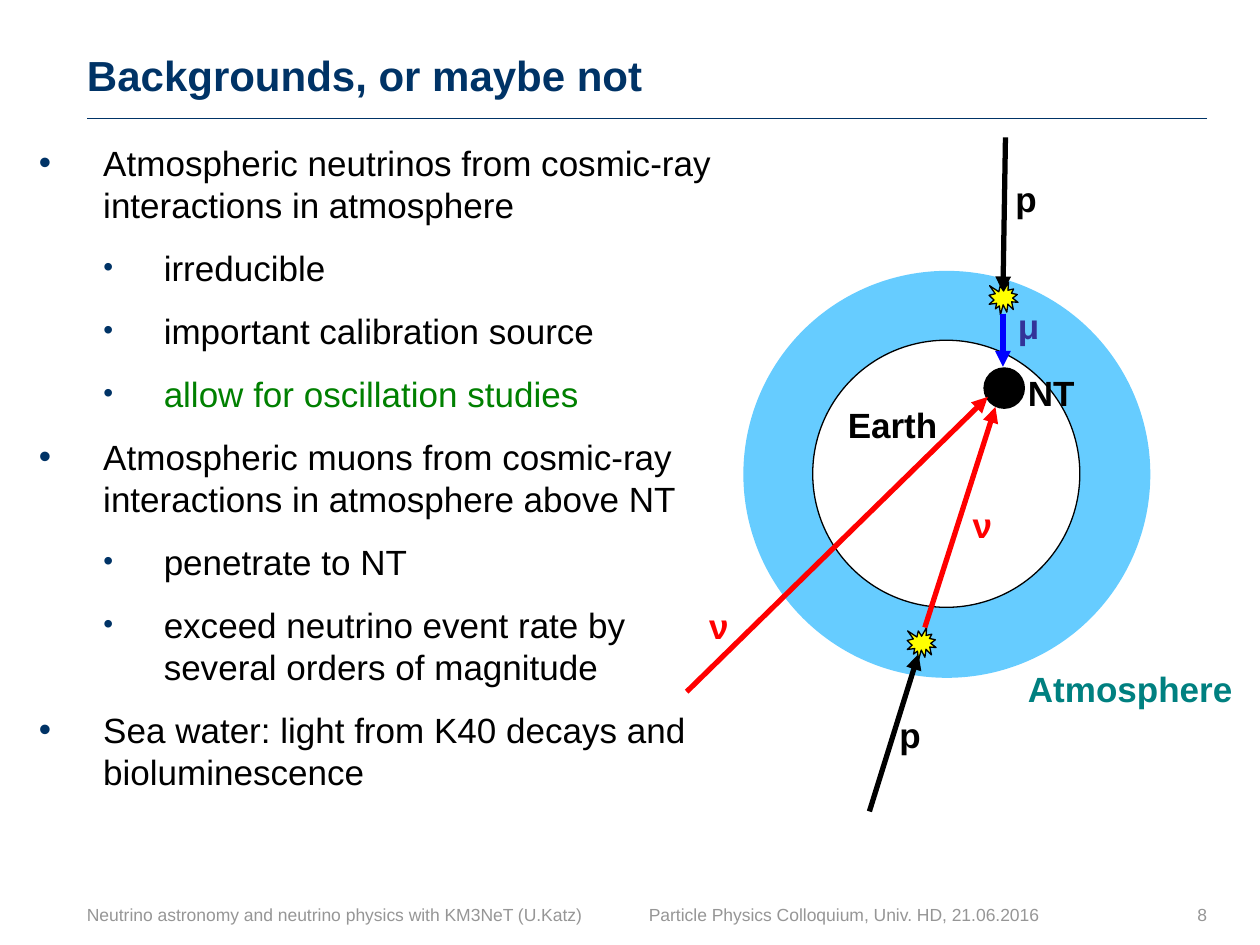
from lxml import etree
from pptx import Presentation
from pptx import util as u
from pptx.dml.color import RGBColor
from pptx.enum import shapes, text
from pptx.oxml.ns import qn

COLORS = {
    "navy": "003366", "grey": "969696", "white": "FFFFFF", "black": "000000",
    "green": "008000", "sky": "66CCFF", "yellow": "FFFF00", "red": "FF0000",
    "blue": "0000FF", "teal": "008080", "indigo": "333399",
}
SHAPE = shapes.MSO_SHAPE
ANCHOR = text.MSO_ANCHOR
INDENTS = [(0.51, 0.51), (0.99, 0.48)]  # left margin and hanging indent per level

BULLETS = [
    (0, "Atmospheric neutrinos from cosmic-ray interactions in atmosphere", "black"),
    (1, "irreducible", "black"),
    (1, "important calibration source", "black"),
    (1, "allow for oscillation studies", "green"),
    (0, "Atmospheric muons from cosmic-ray interactions in atmosphere above NT", "black"),
    (1, "penetrate to NT", "black"),
    (1, "exceed neutrino event rate by\nseveral orders of magnitude", "black"),
    (0, "Sea water: light from K40 decays and bioluminescence", "black"),
]
LABELS = [
    ("p", 7.04, 5.61, 0.37, "black"),
    ("Atmosphere", 8.06, 5.25, 1.84, "teal"),
    ("Earth", 6.63, 3.15, 0.92, "black"),
    ("μ", 7.98, 2.37, 0.36, "indigo"),
    ("ν", 5.53, 4.75, 0.35, "red"),
    ("p", 7.96, 1.36, 0.37, "black"),
    ("ν", 7.62, 3.95, 0.35, "red"),
    ("NT", 8.06, 2.9, 0.58, "black"),
]


def rgb(name):
    return RGBColor.from_string(COLORS[name])


def write(p, words, size=20, color="black", bold=False, align=None, spacing=None):
    """Fill a paragraph; a newline in the words becomes a line break."""
    for i, line in enumerate(words.split("\n")):
        if i:
            p.add_line_break()
        r = p.add_run()
        r.text = line
        r.font.name = "Arial"
        r.font.size = u.Pt(size)
        r.font.bold = bold
        r.font.color.rgb = rgb(color)
    if align is not None:
        p.alignment = align
    if spacing is not None:
        p.line_spacing = spacing


class Deck:
    def __init__(self):
        self.prs = Presentation()
        self.prs.slide_width = u.Inches(10)
        self.prs.slide_height = u.Inches(7.5)
        self.s = self.prs.slides.add_slide(self.prs.slide_layouts[6])

    def box(self, words, x, y, w, h, anchor=ANCHOR.MIDDLE, **fmt):
        """Add a wrapped text box without insets."""
        tf = self.s.shapes.add_textbox(*map(u.Inches, (x, y, w, h))).text_frame
        tf.word_wrap = True
        tf.vertical_anchor = anchor
        tf.margin_left = tf.margin_right = tf.margin_top = tf.margin_bottom = 0
        write(tf.paragraphs[0], words, **fmt)

    def label(self, words, x, y, w, color):
        sp = self.s.shapes.add_textbox(*map(u.Inches, (x, y, w, 0.44)))
        tf = sp.text_frame
        tf.word_wrap = False
        tf.auto_size = text.MSO_AUTO_SIZE.SHAPE_TO_FIT_TEXT
        write(tf.paragraphs[0], words, color=color, bold=True)

    def shape(self, kind, x, y, w, h, fill, line=None):
        sp = self.s.shapes.add_shape(kind, *map(u.Inches, (x, y, w, h)))
        sp.shadow.inherit = False
        sp.fill.solid()
        sp.fill.fore_color.rgb = rgb(fill)
        if line:
            sp.line.color.rgb = rgb(line)
            sp.line.width = u.Pt(0.75)
        else:
            sp.line.fill.background()
        return sp

    def circle(self, x, y, d, fill, line=None):
        self.shape(SHAPE.OVAL, x, y, d, d, fill, line)

    def burst(self, x, y):
        self.shape(SHAPE.EXPLOSION1, x, y, 0.23, 0.26, "yellow", "black")

    def line(self, x1, y1, x2, y2, color, width=3, arrow=True):
        c = self.s.shapes.add_connector(
            shapes.MSO_CONNECTOR.STRAIGHT, *map(u.Inches, (x1, y1, x2, y2)))
        c.line.color.rgb = rgb(color)
        c.line.width = u.Pt(width)
        if arrow:
            etree.SubElement(c.line._get_or_add_ln(), qn("a:tailEnd"), type="triangle")
        etree.SubElement(c._element.spPr, qn("a:effectLst"))

    def bullets(self, items, x, y, w, h):
        tf = self.shape(SHAPE.RECTANGLE, x, y, w, h, "white", "white").text_frame
        tf.word_wrap = True
        tf.vertical_anchor = ANCHOR.TOP
        tf.margin_left = tf.margin_right = tf.margin_top = tf.margin_bottom = 0
        for i, (level, words, color) in enumerate(items):
            p = tf.add_paragraph() if i else tf.paragraphs[0]
            p.level = level
            pPr = p._p.get_or_add_pPr()
            left, hang = INDENTS[level]
            pPr.set("marL", str(u.Inches(left)))
            pPr.set("indent", str(-u.Inches(hang)))
            clr = etree.SubElement(pPr, qn("a:buClr"))
            etree.SubElement(clr, qn("a:srgbClr"), val=COLORS["navy"])
            if level:
                etree.SubElement(pPr, qn("a:buSzPct"), val="80000")
            etree.SubElement(pPr, qn("a:buFont"), typeface="Arial")
            etree.SubElement(pPr, qn("a:buChar"), char="•")
            p.space_before = u.Pt(6 if i else 0)
            p.space_after = u.Pt(6)
            write(p, words, color=color, align=text.PP_ALIGN.LEFT, spacing=1.0)


def main():
    d = Deck()
    d.line(9.58, 0.94, 0.69, 0.94, "navy", width=0.75, arrow=False)
    footer = dict(size=10, color="grey")
    d.box("Neutrino astronomy and neutrino physics with KM3NeT (U.Katz)",
          0.69, 7.01, 4.3, 0.49, **footer)
    d.box("Particle Physics Colloquium, Univ. HD, 21.06.2016",
          5.15, 7.01, 3.36, 0.49, **footer)
    d.box("8", 9.09, 7.01, 0.49, 0.49, align=text.PP_ALIGN.RIGHT, **footer)
    d.box("Backgrounds, or maybe not", 0.69, 0.25, 8.75, 0.54, anchor=ANCHOR.BOTTOM,
          size=24, color="navy", bold=True, spacing=u.Pt(28))
    d.bullets(BULLETS, 0.31, 1.12, 5.64, 5.47)

    # Atmosphere, Earth and the neutrino telescope
    d.circle(5.9, 2.15, 3.23, "sky")
    d.circle(6.45, 2.7, 2.12, "white", "black")
    d.circle(7.81, 2.92, 0.32, "black", "black")

    # Particle tracks and the cosmic-ray interactions
    d.line(6.9, 6.44, 7.29, 5.19, "black")
    d.burst(7.2, 4.98)
    d.line(7.34, 4.98, 7.9, 3.23, "red")
    d.line(5.45, 5.49, 7.84, 3.15, "red")
    d.line(7.98, 1.09, 7.96, 2.32, "black")
    d.burst(7.85, 2.24)
    d.line(7.96, 2.49, 7.96, 2.91, "blue")

    for label in LABELS:
        d.label(*label)
    d.prs.save("out.pptx")


if __name__ == "__main__":
    main()
